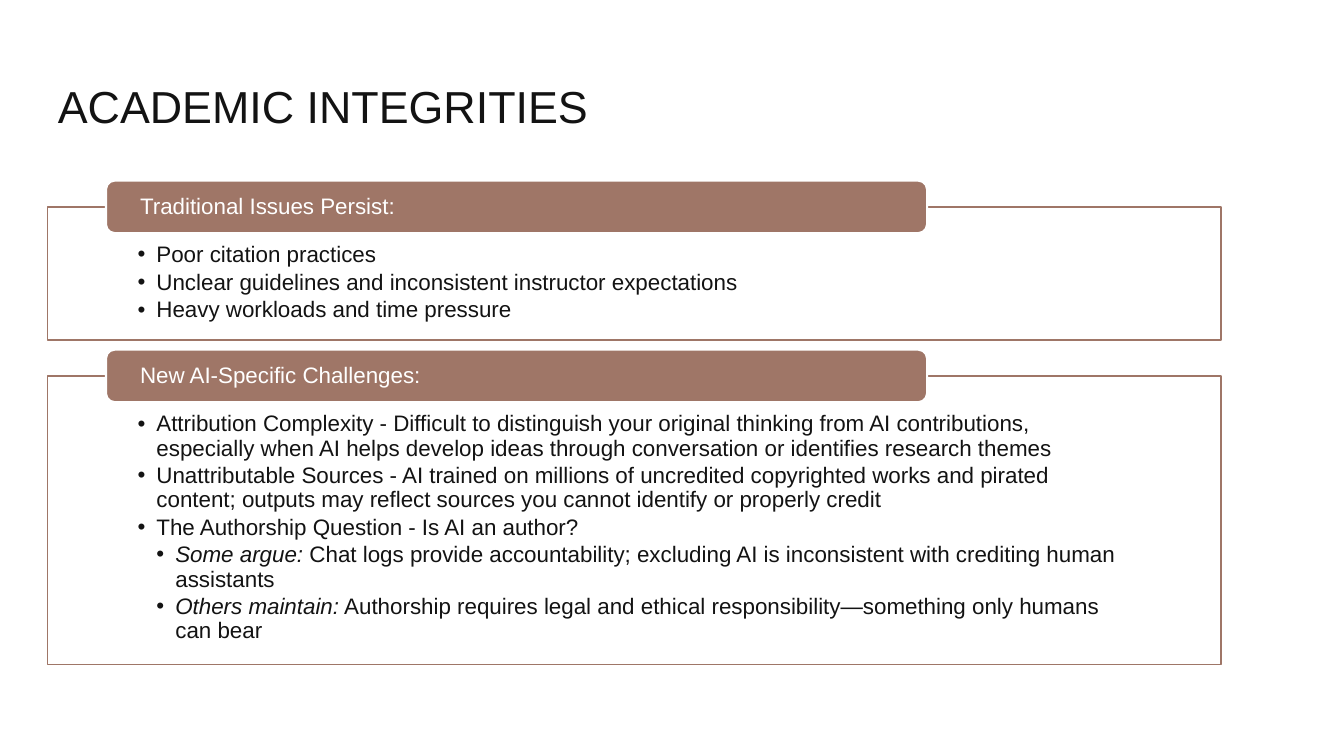
from lxml.etree import SubElement
from pptx import Presentation
from pptx.dml.color import RGBColor
from pptx.enum.shapes import MSO_SHAPE as Shape
from pptx.enum.text import MSO_ANCHOR as Anchor, MSO_AUTO_SIZE as AutoSize, PP_ALIGN as Align
from pptx.oxml.ns import qn
from pptx.util import Pt

TITLE = "ACADEMIC INTEGRITIES"
PANELS = [
    {
        "heading": "Traditional Issues Persist:",
        "top": 197,
        "height": 127,
        "bullets": [
            (0, "", "Poor citation practices"),
            (0, "", "Unclear guidelines and inconsistent instructor expectations"),
            (0, "", "Heavy workloads and time pressure"),
        ],
    },
    {
        "heading": "New AI-Specific Challenges:",
        "top": 358,
        "height": 275,
        "bullets": [
            (0, "", "Attribution Complexity - Difficult to distinguish your original thinking from AI "
                    "contributions, especially when AI helps develop ideas through conversation or "
                    "identifies research themes"),
            (0, "", "Unattributable Sources - AI trained on millions of uncredited copyrighted works "
                    "and pirated content; outputs may reflect sources you cannot identify or properly credit"),
            (0, "", "The Authorship Question - Is AI an author?"),
            (1, "Some argue:", " Chat logs provide accountability; excluding AI is inconsistent "
                               "with crediting human assistants"),
            (1, "Others maintain:", " Authorship requires legal and ethical responsibility—something "
                                    "only humans can bear"),
        ],
    },
]
INK, CLAY, WHITE = "131313", "9F7667", "FFFFFF"
LEFT, WIDTH = 45, 1118
HEADING_LEFT, HEADING_WIDTH, HEADING_HEIGHT = 101, 782, 50
INDENT = 18


def px(length):
    return length * 9525


def colour(value):
    return RGBColor.from_string(value)


def assign(target, values):
    for name, value in values.items():
        setattr(target, name, value)


def place(box, left, top, width, height):
    assign(box, {"left": px(left), "top": px(top), "width": px(width), "height": px(height)})


def paint(box, fill, line, line_width):
    box.fill.solid()
    box.fill.fore_color.rgb = colour(fill)
    box.line.color.rgb = colour(line)
    box.line.width = Pt(line_width)


def set_frame(frame, anchor, margins):
    left, top, right, bottom = map(px, margins)
    assign(frame, {"word_wrap": True, "auto_size": AutoSize.NONE, "vertical_anchor": anchor,
                   "margin_left": left, "margin_top": top,
                   "margin_right": right, "margin_bottom": bottom})


def set_para(para, size, shade, after=0):
    assign(para, {"alignment": Align.LEFT, "line_spacing": 0.9,
                  "space_before": Pt(0), "space_after": Pt(after)})
    assign(para.font, {"name": "Arial", "size": Pt(size)})
    for span in para.runs:
        assign(span.font, {"name": "Arial", "size": Pt(size)})
        span.font.color.rgb = colour(shade)


def add_bullet(para, level):
    para.level = level
    props = para._p.get_or_add_pPr()
    props.set("marL", str(px(INDENT * (level + 1))))
    props.set("indent", str(px(-INDENT)))
    SubElement(props, qn("a:buChar")).set("char", "•")


def fill_list(frame, bullets):
    for number, (level, lead, text) in enumerate(bullets):
        para = frame.add_paragraph() if number else frame.paragraphs[0]
        add_bullet(para, level)
        if lead:
            span = para.add_run()
            span.text = lead
            span.font.italic = True
        para.add_run().text = text
        set_para(para, 16, INK, 2.4)


def add_heading(page, text, panel_top):
    box = page.shapes.add_shape(Shape.ROUNDED_RECTANGLE, 0, 0, 0, 0)
    place(box, HEADING_LEFT, panel_top - HEADING_HEIGHT // 2, HEADING_WIDTH, HEADING_HEIGHT)
    box.shadow.inherit = False
    paint(box, CLAY, WHITE, 1.5)
    set_frame(box.text_frame, Anchor.MIDDLE, (30, 0, 30, 0))
    box.text_frame.text = text
    set_para(box.text_frame.paragraphs[0], 16, WHITE)


def main():
    deck = Presentation()
    assign(deck, {"slide_width": px(1280), "slide_height": px(720)})
    page = deck.slides.add_slide(deck.slide_layouts[3])
    title = page.shapes.title
    place(title, LEFT, 30, WIDTH, 102)
    set_frame(title.text_frame, Anchor.BOTTOM, (10, 5, 10, 5))
    title.text_frame.text = TITLE
    set_para(title.text_frame.paragraphs[0], 32, INK)

    for number, panel in enumerate(PANELS, 1):
        body = page.placeholders[number]
        place(body, LEFT, panel["top"], WIDTH, panel["height"])
        paint(body, WHITE, CLAY, 1)
        set_frame(body.text_frame, Anchor.TOP, (86, 35, 86, 11))
        fill_list(body.text_frame, panel["bullets"])
        add_heading(page, panel["heading"], panel["top"])

    deck.save("out.pptx")


if __name__ == "__main__":
    main()
